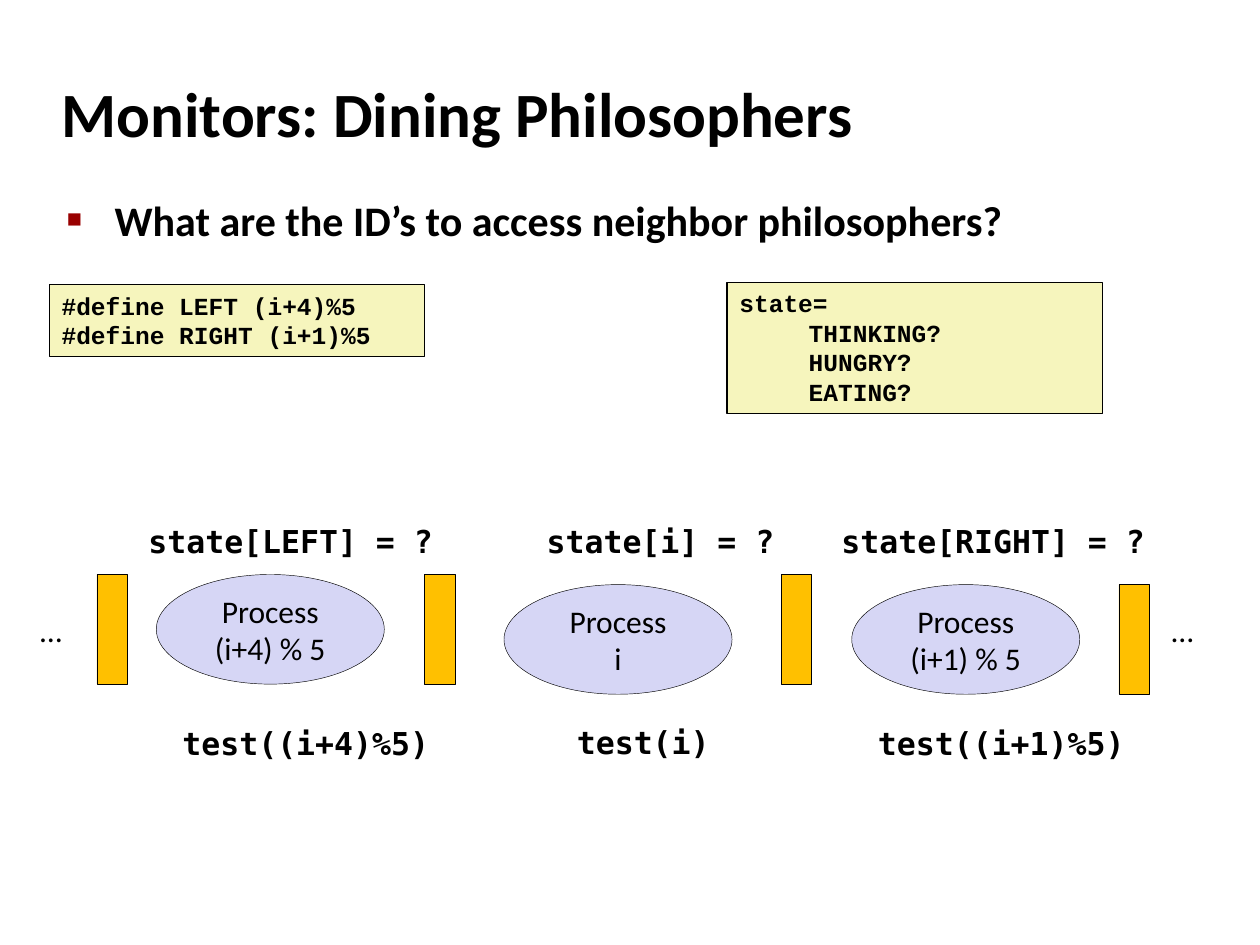
from dataclasses import dataclass

from lxml.etree import SubElement
from pptx import Presentation
from pptx.dml.color import RGBColor
from pptx.enum.shapes import MSO_SHAPE as Shape
from pptx.enum.text import MSO_ANCHOR as Anchor, MSO_AUTO_SIZE as AutoSize, PP_ALIGN as Align
from pptx.oxml.ns import qn
from pptx.util import Inches, Pt


@dataclass(frozen=True)
class Theme:
    ink: str = "000000"
    bullet: str = "990000"
    code_fill: str = "F6F5BD"
    process_fill: str = "D6D6F5"
    fork_fill: str = "FFC000"
    sans: str = "Calibri"
    code: str = "Courier New"
    mono: str = "DejaVu Sans Mono"
    title_size: int = 36
    body_size: int = 24
    label_size: int = 18
    code_size: int = 14


THEME = Theme()
FORK_SIZE = (0.24, 0.87)
PROCESS_SIZE = (1.81, 0.87)
LABEL_HEIGHT = 0.41
CODE_WIDTH = 2.98
CODE_INDENT = 0.55


def inches(*lengths):
    return [Inches(length) for length in lengths]


def apply(target, values):
    for name, value in values.items():
        setattr(target, name, value)


def write(box, lines, font, size, bold=False, align=Align.LEFT, **frame_format):
    """Fill a box with one paragraph a line; \\v inside a line breaks it."""
    frame = box.text_frame
    apply(frame, {"word_wrap": True, **frame_format})
    for index, line in enumerate(lines):
        para = frame.paragraphs[0] if index == 0 else frame.add_paragraph()
        para.text = line
        para.alignment = align
        apply(para.font, {"name": font, "size": Pt(size), "bold": bold})
        para.font.color.rgb = RGBColor.from_string(THEME.ink)
    return frame.paragraphs


def set_indent(para, margin, first_line=0):
    props = para._p.get_or_add_pPr()
    props.set("marL", str(Inches(margin)))
    props.set("indent", str(Inches(first_line)))
    return props


def add_square_bullet(para):
    props = set_indent(para, 0.38, -0.38)
    color = SubElement(props, qn("a:buClr"))
    SubElement(color, qn("a:srgbClr"), val=THEME.bullet)
    SubElement(props, qn("a:buSzPct"), val="60000")
    SubElement(props, qn("a:buChar"), char="■")
    # Run defaults must come after the bullet in the paragraph properties.
    props.append(props.find(qn("a:defRPr")))


def place(placeholder, left, top, width, height):
    names = ("left", "top", "width", "height")
    apply(placeholder, dict(zip(names, inches(left, top, width, height))))


def add_heading(slide, title, point):
    place(slide.shapes.title, 0.39, 0.48, 8.3, 0.83)
    para, = write(slide.shapes.title, [title], THEME.sans, THEME.title_size,
                  bold=True, vertical_anchor=Anchor.MIDDLE)
    set_indent(para, 0.13, -0.13)

    body = slide.placeholders[1]
    place(body, 0.43, 1.49, 8.64, 0.75)
    para, = write(body, [point], THEME.sans, THEME.body_size, bold=True)
    add_square_bullet(para)


def add_block(slide, kind, left, top, size, fill, line_width=0.25):
    block = slide.shapes.add_shape(kind, *inches(left, top, *size))
    block.shadow.inherit = False
    block.fill.solid()
    block.fill.fore_color.rgb = RGBColor.from_string(fill)
    block.line.color.rgb = RGBColor.from_string(THEME.ink)
    block.line.width = Pt(line_width)
    return block


def add_code(slide, left, top, height, lines):
    box = add_block(slide, Shape.RECTANGLE, left, top, (CODE_WIDTH, height),
                    THEME.code_fill, line_width=0.75)
    return write(box, lines, THEME.code, THEME.code_size, bold=True,
                 vertical_anchor=Anchor.TOP, auto_size=AutoSize.SHAPE_TO_FIT_TEXT)


def add_process(slide, left, top, index):
    oval = add_block(slide, Shape.OVAL, left, top, PROCESS_SIZE, THEME.process_fill)
    write(oval, [f"Process\v{index}"], THEME.sans, THEME.label_size, align=Align.CENTER,
          vertical_anchor=Anchor.MIDDLE, word_wrap=False)


def add_label(slide, left, top, width, text, font=THEME.mono, bold=True):
    box = slide.shapes.add_textbox(*inches(left, top, width, LABEL_HEIGHT))
    write(box, [text], font, THEME.label_size, bold=bold,
          word_wrap=False, auto_size=AutoSize.SHAPE_TO_FIT_TEXT)


def main():
    deck = Presentation()
    deck.slide_width, deck.slide_height = inches(10, 7.5)
    slide = deck.slides.add_slide(deck.slide_layouts[1])

    add_heading(slide, "Monitors: Dining Philosophers",
                "What are the ID’s to access neighbor philosophers?")
    add_code(slide, 0.39, 2.26, 0.57, ["#define LEFT (i+4)%5", "#define RIGHT (i+1)%5"])
    states = add_code(slide, 5.77, 2.24, 1.04, ["state=", "THINKING?", "HUNGRY?", "EATING?"])
    for para in states[1:]:
        set_indent(para, CODE_INDENT)

    for left, top, index in ((1.24, 4.56, "(i+4) % 5"), (4, 4.64, "i"), (6.76, 4.64, "(i+1) % 5")):
        add_process(slide, left, top, index)
    for left, top in ((0.77, 4.56), (3.37, 4.56), (6.2, 4.56), (8.88, 4.64)):
        add_block(slide, Shape.RECTANGLE, left, top, FORK_SIZE, THEME.fork_fill)

    for left, width, name in ((1.08, 2.46, "LEFT"), (4.24, 2.01, "i"), (6.58, 2.61, "RIGHT")):
        add_label(slide, left, 4.09, width, f"state[{name}] = ?")
    for left, top, width, index in ((1.35, 5.7, 2.16, "(i+4)%5"), (4.48, 5.69, 1.28, "i"),
                                    (6.87, 5.7, 2.16, "(i+1)%5")):
        add_label(slide, left, top, width, f"test({index})")
    for left in (0.22, 9.2):
        add_label(slide, left, 4.8, 0.37, "…", font=THEME.sans, bold=False)

    deck.save("out.pptx")


if __name__ == "__main__":
    main()
